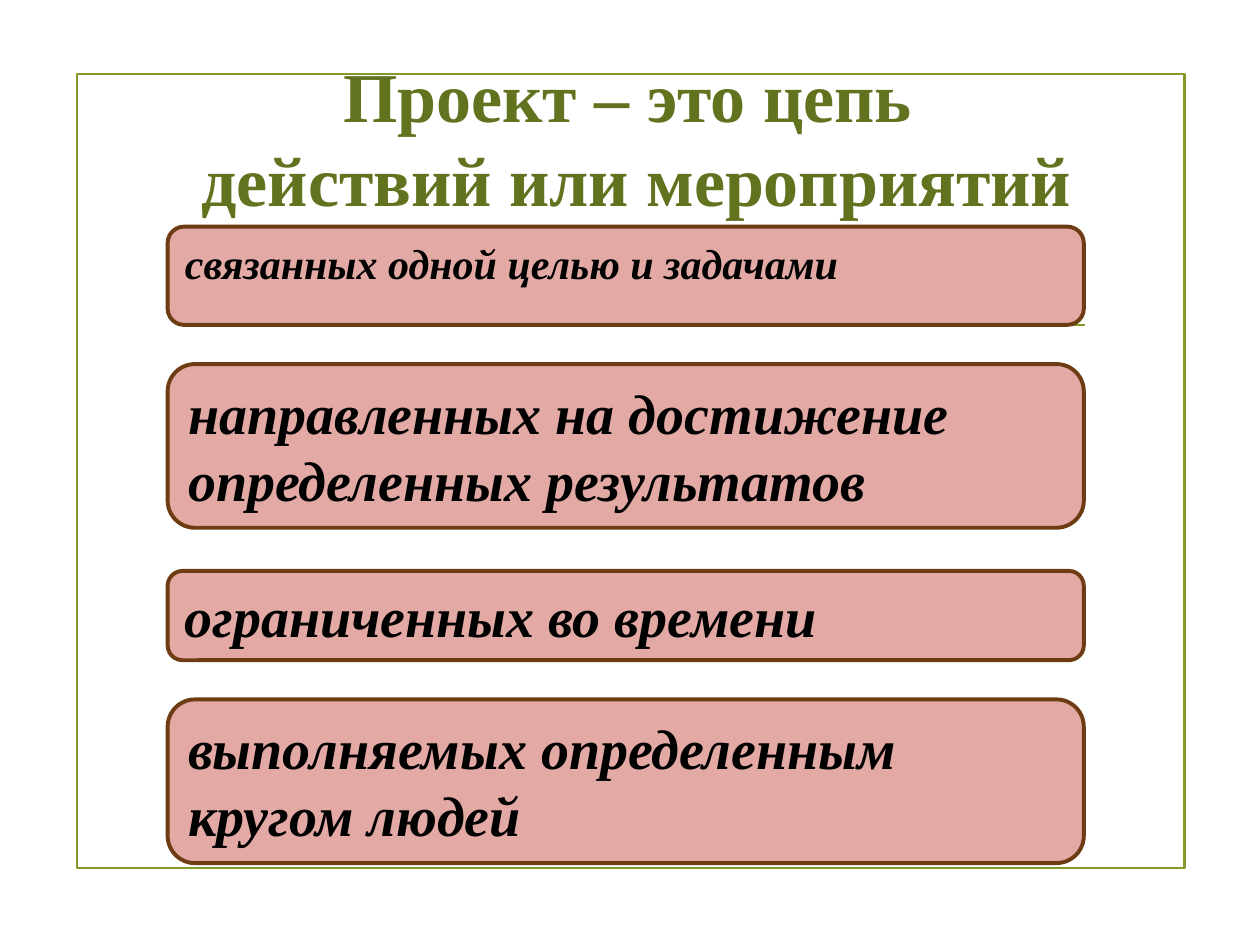
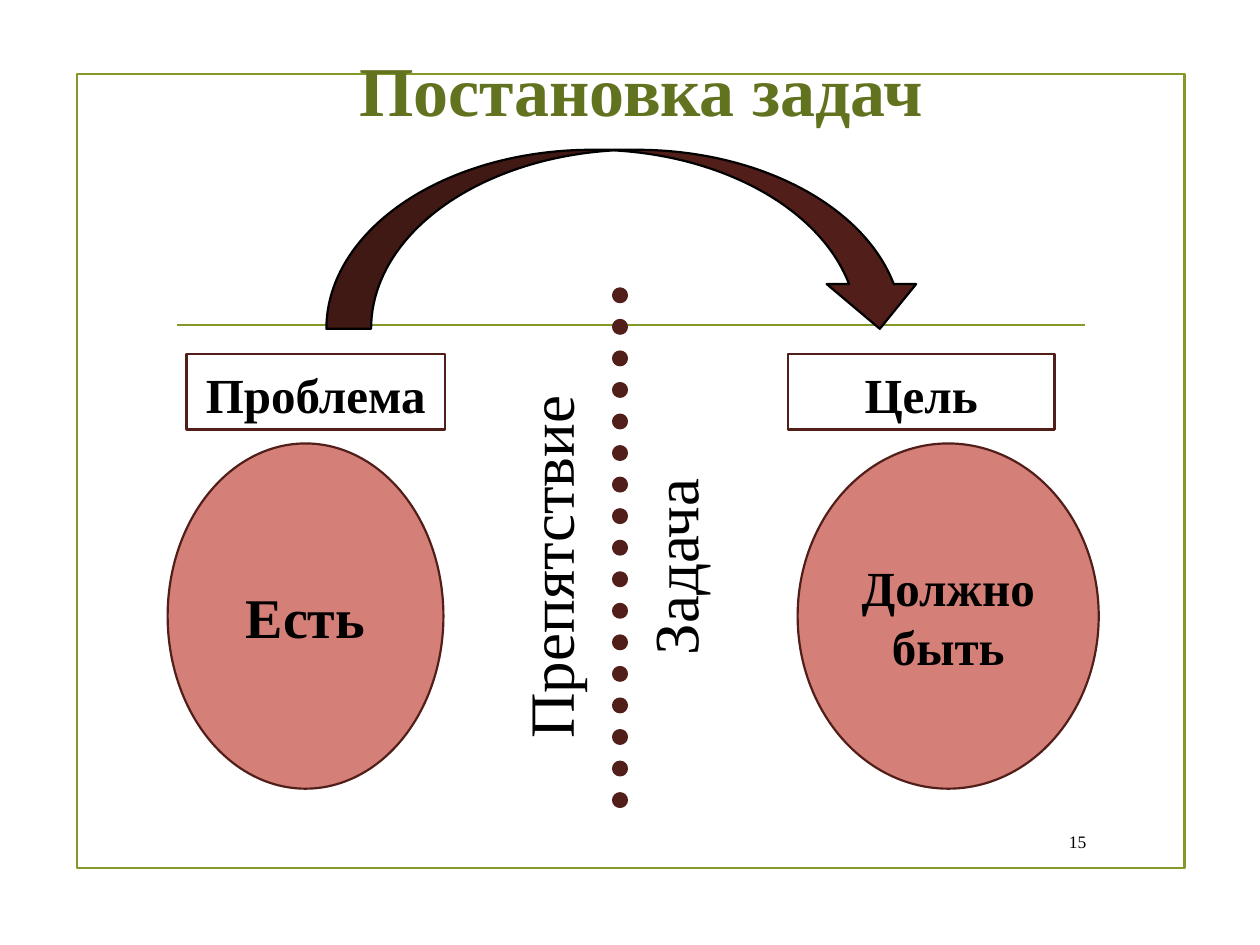
"""Build two framed slides on what a project is and how its tasks are set."""
import dataclasses

import pptx
import pptx.dml.color
import pptx.enum.dml
import pptx.enum.shapes
import pptx.enum.text
import pptx.oxml.ns
import pptx.oxml.xmlchemy
import pptx.util

Cm = pptx.util.Cm
Pt = pptx.util.Pt
qn = pptx.oxml.ns.qn
Shape = pptx.enum.shapes.MSO_SHAPE
Align = pptx.enum.text.PP_ALIGN
Anchor = pptx.enum.text.MSO_ANCHOR


@dataclasses.dataclass(frozen=True)
class Theme:
    font: str = "Times New Roman"
    ink: str = "000000"
    paper: str = "FFFFFF"
    title: str = "62731F"
    frame: str = "83992A"
    card: str = "E3AAA5"
    card_edge: str = "6D3C13"
    state: str = "D47F77"
    maroon: str = "511E19"
    title_size: int = 40
    barrier_size: int = 36
    large_size: int = 32
    label_size: int = 28
    small_size: int = 24
    number_size: int = 10
    thin: float = 1.25
    card_line: float = 2.25
    dots: float = 9


def rgb(value):
    return pptx.dml.color.RGBColor.from_string(value)


def place(shape, box):
    shape.left, shape.top, shape.width, shape.height = map(Cm, box)


class Deck:
    def __init__(self, theme):
        self.theme = theme
        self.prs = pptx.Presentation()
        self.prs.slide_width, self.prs.slide_height = Cm(25.4), Cm(19.05)
        self.slide = None

    def start_slide(self, layout, title_lines, title_box):
        self.slide = self.prs.slides.add_slide(self.prs.slide_layouts[layout])
        background = self.slide.background.fill
        background.solid()
        background.fore_color.rgb = rgb(self.theme.paper)
        frame = self.shape(Shape.RECTANGLE, (1.55, 1.5, 22.33, 16), edge=self.theme.frame)
        rule = self.line((3.56, 6.55), (21.87, 6.55), self.theme.frame)
        for backdrop in (rule, frame):
            self.slide.shapes.element.insert(2, backdrop.element)
        heading = self.slide.shapes.title
        place(heading, title_box)
        self.set_text(heading, title_lines, self.theme.title_size, color=self.theme.title,
                      align=Align.CENTER, anchor=Anchor.MIDDLE, bold=True)

    def paint(self, shape, fill, edge, width):
        if fill:
            shape.fill.solid()
            shape.fill.fore_color.rgb = rgb(fill)
        else:
            shape.fill.background()
        shape.line.color.rgb = rgb(edge)
        shape.line.width = Pt(width)

    def shape(self, preset, box, fill=None, edge=None, width=None):
        shape = self.slide.shapes.add_shape(preset, *map(Cm, box))
        shape.shadow.inherit = False
        self.paint(shape, fill, edge, width or self.theme.thin)
        return shape

    def line(self, start, end, color, width=None):
        line = self.slide.shapes.add_connector(
            pptx.enum.shapes.MSO_CONNECTOR.STRAIGHT, *map(Cm, start + end))
        line.line.color.rgb = rgb(color)
        line.line.width = Pt(width or self.theme.thin)
        line.element.spPr.append(pptx.oxml.xmlchemy.OxmlElement("a:effectLst"))
        return line

    def dotted_line(self, start, end):
        divider = self.line(start, end, self.theme.maroon, self.theme.dots)
        divider.line.dash_style = pptx.enum.dml.MSO_LINE.ROUND_DOT
        divider.element.spPr.find(qn("a:ln")).set("cap", "rnd")

    def set_text(self, shape, lines, size, color=None, align=Align.LEFT, anchor=Anchor.TOP,
                 bold=False, italic=False):
        frame = shape.text_frame
        frame.word_wrap = True
        frame.auto_size = pptx.enum.text.MSO_AUTO_SIZE.NONE
        frame.vertical_anchor = anchor
        paragraph = frame.paragraphs[0]
        paragraph.alignment = align
        paragraph.space_before = Pt(0)
        for index, line in enumerate(lines):
            if index:
                paragraph.add_line_break()
            run = paragraph.add_run()
            run.text = line
            run.font.name = self.theme.font
            run.font.size = Pt(size)
            run.font.bold, run.font.italic = bold, italic
            run.font.color.rgb = rgb(color or self.theme.ink)
        return paragraph

    def text(self, text, box, size, rotation=0, **style):
        label = self.slide.shapes.add_textbox(*map(Cm, box))
        label.rotation = rotation
        self.set_text(label, [text], size, **style)

    def card(self, text, box):
        card = self.shape(Shape.ROUNDED_RECTANGLE, box, self.theme.card,
                          self.theme.card_edge, self.theme.card_line)
        self.set_text(card, [text], self.theme.large_size, bold=True, italic=True)

    def body_card(self, text, box):
        card = self.slide.placeholders[1]
        place(card, box)
        outline = pptx.oxml.xmlchemy.OxmlElement("a:prstGeom")
        outline.set("prst", "roundRect")
        outline.append(pptx.oxml.xmlchemy.OxmlElement("a:avLst"))
        card.element.spPr.find(qn("a:xfrm")).addnext(outline)
        self.paint(card, self.theme.card, self.theme.card_edge, self.theme.card_line)
        paragraph = self.set_text(card, [text], self.theme.small_size, bold=True, italic=True)
        paragraph.space_after = Pt(6)
        properties = paragraph._p.get_or_add_pPr()
        properties.set("marL", "0")
        properties.set("indent", "0")
        properties.append(pptx.oxml.xmlchemy.OxmlElement("a:buNone"))

    def label(self, text, box):
        label = self.shape(Shape.RECTANGLE, box, edge=self.theme.maroon)
        paragraph = self.set_text(label, [text], self.theme.label_size, align=Align.CENTER,
                                  anchor=Anchor.MIDDLE, bold=True)
        paragraph.line_spacing = 1.07
        paragraph.space_after = Pt(8)

    def state(self, text, box, size):
        state = self.shape(Shape.OVAL, box, self.theme.state, self.theme.maroon)
        self.set_text(state, [text], size, align=Align.CENTER, anchor=Anchor.MIDDLE, bold=True)


def project_slide(deck):
    deck.start_slide(1, ["Проект – это цепь ", "действий или мероприятий"],
                     (1.4, 1.93, 22.86, 1.65))
    left, width = 3.38, 18.47
    deck.body_card("связанных одной целью и задачами", (left, 4.57, width, 1.98))
    for trait, top, height in (
        ("направленных на достижение определенных результатов", 7.34, 3.3),
        ("ограниченных во времени", 11.51, 1.8),
        ("выполняемых определенным кругом людей", 14.1, 3.3),
    ):
        deck.card(trait, (left, top, width, height))


def task_slide(deck):
    theme = deck.theme
    deck.start_slide(5, ["Постановка задач "], (2.59, 0.79, 21.01, 1.98))
    deck.text("15", (21.06, 16.56, 1.09, 0.79), theme.number_size,
              align=Align.RIGHT, anchor=Anchor.MIDDLE)
    deck.dotted_line((12.5, 16.13), (12.5, 5.56))
    for heading, left, width in (("Цель", 15.88, 5.38), ("Проблема", 3.76, 5.21)):
        deck.label(heading, (left, 7.14, width, 1.52))
    deck.shape(Shape.CURVED_DOWN_ARROW, (6.58, 3.02, 12.06, 3.61), theme.maroon, theme.ink)
    for barrier, left in (("Препятствие", 6.81), ("Задача", 9.32)):
        deck.text(barrier, (left, 10.53, 8.53, 1.8), theme.barrier_size,
                  rotation=270, align=Align.CENTER)
    for state, left, width, size in (
        ("Есть", 3.38, 5.56, theme.large_size),
        ("Должно быть", 16.08, 6.07, theme.label_size),
    ):
        deck.state(state, (left, 8.94, width, 6.96), size)


def main():
    deck = Deck(Theme())
    project_slide(deck)
    task_slide(deck)
    deck.prs.save("out.pptx")


if __name__ == "__main__":
    main()
